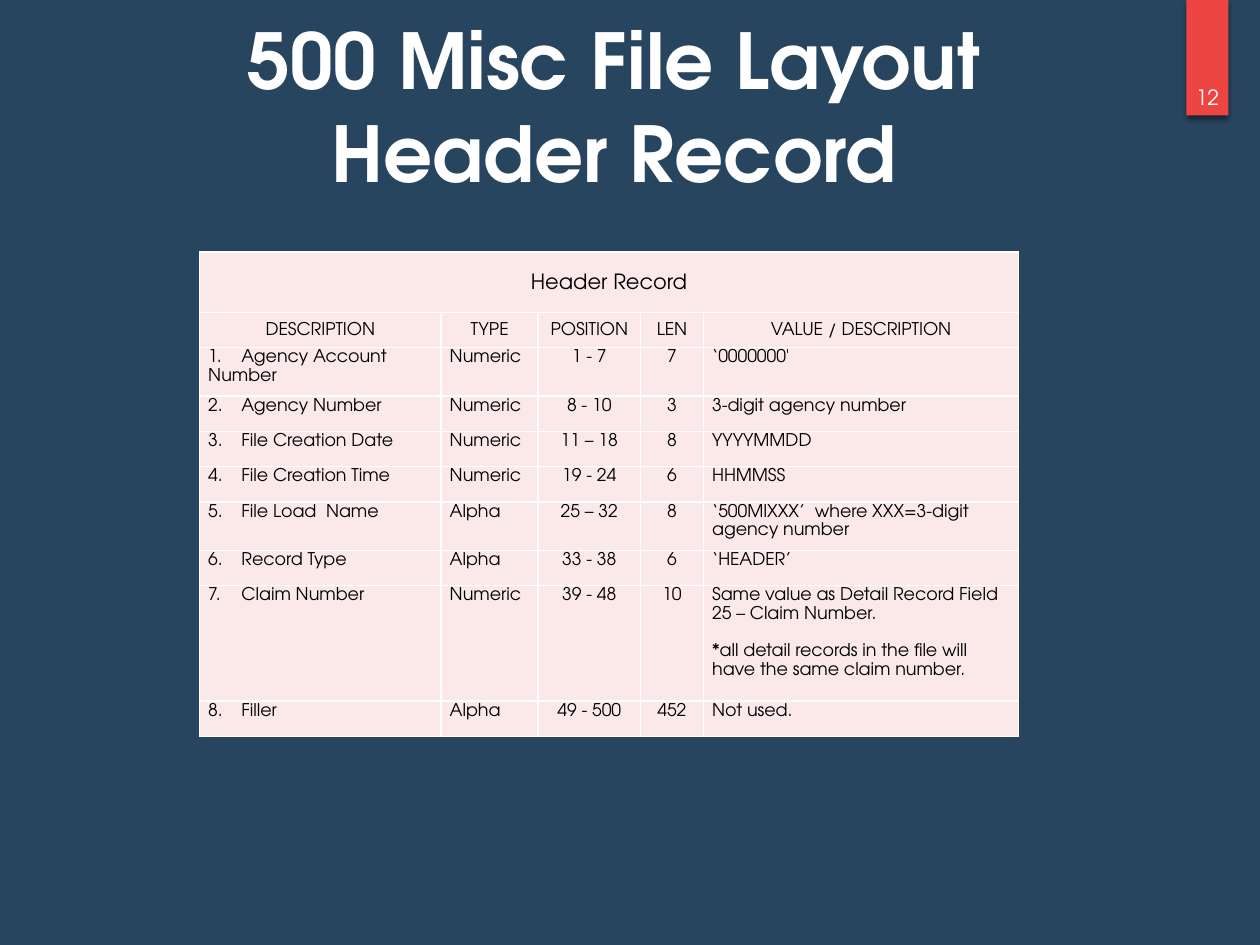
from lxml.etree import SubElement
from pptx import Presentation
from pptx.dml.color import RGBColor
from pptx.enum.shapes import MSO_SHAPE
from pptx.enum.text import MSO_ANCHOR, PP_ALIGN
from pptx.oxml import parse_xml
from pptx.oxml.ns import nsdecls, qn
from pptx.util import Pt

FONT = "TeX Gyre Adventor"
WHITE, BLACK, PINK = "FFFFFF", "000000", "FBE9E9"


def color(hex_code):
    return RGBColor.from_string(hex_code)


def style(paragraph, size, hex_code, align=PP_ALIGN.CENTER, bold=False):
    paragraph.alignment = align
    for run in paragraph.runs:
        run.font.name = FONT
        run.font.size = Pt(size)
        run.font.bold = bold
        run.font.color.rgb = color(hex_code)


prs = Presentation()
prs.slide_width, prs.slide_height = Pt(720), Pt(540)
slide = prs.slides.add_slide(prs.slide_layouts[6])
slide.background.fill.solid()
slide.background.fill.fore_color.rgb = color("27455F")

# Page ribbon
ribbon = slide.shapes.add_shape(MSO_SHAPE.RECTANGLE, Pt(678), Pt(0), Pt(24), Pt(66))
ribbon.fill.solid()
ribbon.fill.fore_color.rgb = color("ED4541")
ribbon.line.fill.background()
ribbon._element.spPr.append(parse_xml(
    f'<a:effectLst {nsdecls("a")}><a:outerShdw blurRad="{Pt(3)}" dist="{Pt(2)}" '
    'dir="5400000" rotWithShape="0"><a:srgbClr val="000000"><a:alpha val="45000"/>'
    '</a:srgbClr></a:outerShdw></a:effectLst>'))

# Title
title = slide.shapes.add_textbox(Pt(48), Pt(12), Pt(606), Pt(96)).text_frame
title.word_wrap = True
title.vertical_anchor = MSO_ANCHOR.MIDDLE
title.text = "500 Misc File Layout\vHeader Record"
style(title.paragraphs[0], 44, WHITE, bold=True)

# Page number
page_number = slide.shapes.add_textbox(Pt(678), Pt(27), Pt(24), Pt(39)).text_frame
page_number.word_wrap = True
page_number.vertical_anchor = MSO_ANCHOR.BOTTOM
page_number.margin_left = page_number.margin_right = 0
page_number.text = "12"
style(page_number.paragraphs[0], 12, WHITE)

# Record layout
records = [
    ("Header Record", "", "", "", ""),
    ("DESCRIPTION", "TYPE", "POSITION", "LEN", "VALUE / DESCRIPTION"),
    ("1.\tAgency Account Number", "Numeric", "1 - 7", "7", "‘0000000'"),
    ("2.\tAgency Number", "Numeric", "8 - 10", "3", "3-digit agency number"),
    ("3.\tFile Creation Date", "Numeric", "11 – 18", "8", "YYYYMMDD"),
    ("4.\tFile Creation Time", "Numeric", "19 - 24", "6", "HHMMSS"),
    ("5.\tFile Load  Name", "Alpha", "25 – 32", "8",
     "‘500MIXXX’  where XXX=3-digit agency number"),
    ("6.\tRecord Type", "Alpha", "33 - 38", "6", "‘HEADER’"),
    ("7.\tClaim Number", "Numeric", "39 - 48", "10",
     "Same value as Detail Record Field 25 – Claim Number.\n"
     "*all detail records in the file will have the same claim number."),
    ("8.\tFiller", "Alpha", "49 - 500", "452", "Not used."),
]
column_widths = [138, 55.5, 58.5, 36, 180]
row_heights = [34.5] + [20.2] * 7 + [64, 20.2]
centered_columns = (2, 3)

table = slide.shapes.add_table(len(records), len(column_widths), Pt(114), Pt(144),
                               Pt(sum(column_widths)), Pt(sum(row_heights))).table
table.first_row = table.horz_banding = False
for column, width in zip(table.columns, column_widths):
    column.width = Pt(width)
for row, height in zip(table.rows, row_heights):
    row.height = Pt(height)
table.cell(0, 0).merge(table.cell(0, len(column_widths) - 1))

for r, record in enumerate(records):
    is_heading = r < 2
    for c, content in enumerate(record):
        cell = table.cell(r, c)
        cell.margin_top = cell.margin_bottom = 0
        cell.margin_left = cell.margin_right = Pt(7 if c == 3 and not is_heading else 5)
        cell.vertical_anchor = MSO_ANCHOR.MIDDLE if is_heading else MSO_ANCHOR.TOP
        cell.text_frame.text = content
        centered = is_heading or c in centered_columns
        for i, paragraph in enumerate(cell.text_frame.paragraphs):
            style(paragraph, 12 if r == 0 else 10, BLACK,
                  PP_ALIGN.CENTER if centered else PP_ALIGN.LEFT)
            paragraph.line_spacing = 1.15
            if i > 0:
                paragraph.space_before = Pt(10.6)
            if "\t" in content:
                tabs = SubElement(paragraph._p.get_or_add_pPr(), qn("a:tabLst"))
                SubElement(tabs, qn("a:tab"), pos=str(Pt(19)), algn="l")
        properties = cell._tc.get_or_add_tcPr()
        for side in ("lnL", "lnR", "lnT", "lnB"):
            border = SubElement(properties, qn(f"a:{side}"), w=str(Pt(1)))
            SubElement(SubElement(border, qn("a:solidFill")), qn("a:srgbClr"), val=WHITE)
        cell.fill.solid()
        cell.fill.fore_color.rgb = color(PINK)

prs.save("out.pptx")
